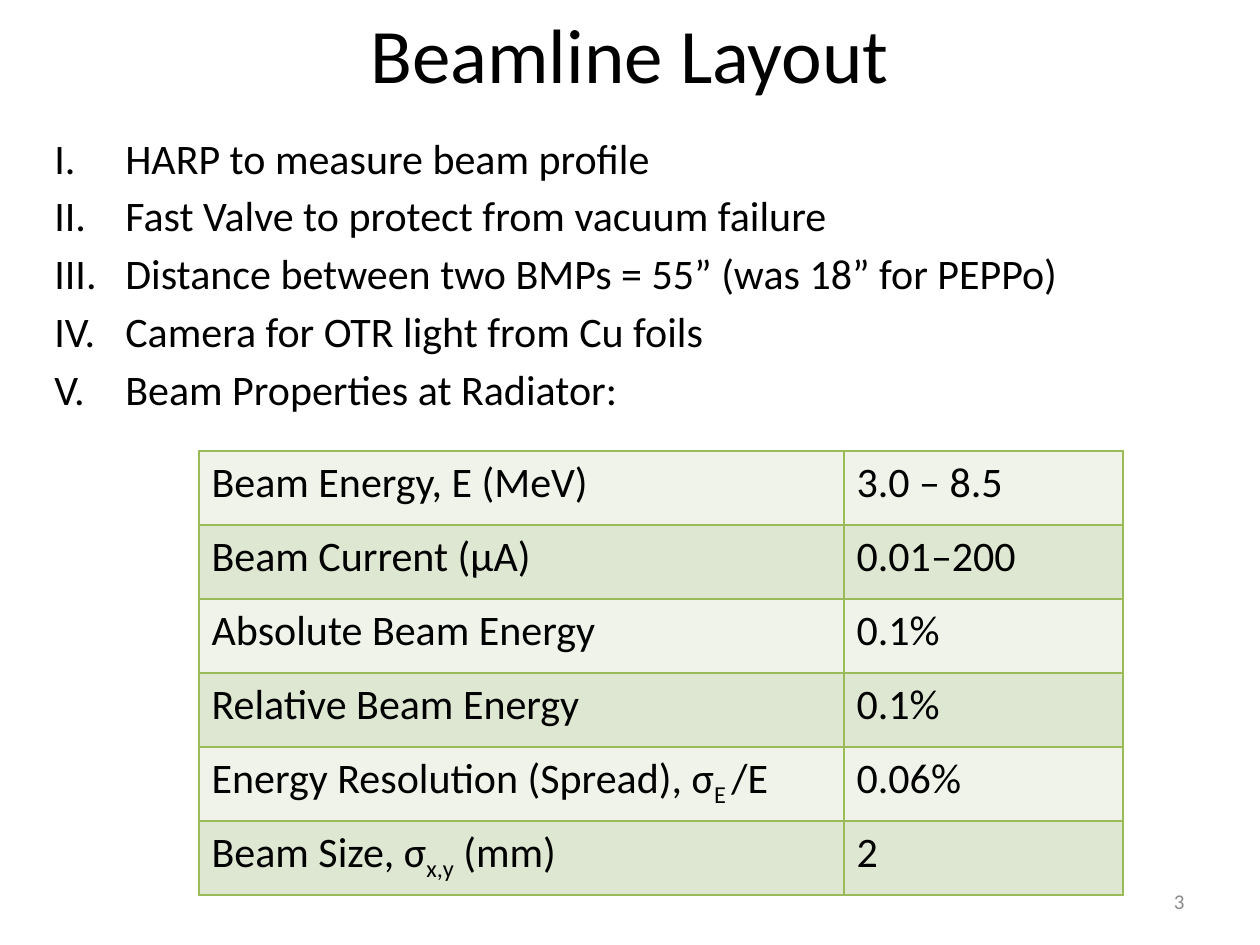
from dataclasses import dataclass

from pptx import Presentation, util as u
from pptx.dml.color import RGBColor
from pptx.enum import text
from pptx.oxml import xmlchemy
from pptx.oxml.ns import qn
from lxml import etree

PX = 914400 / 126  # EMU per px
FONT = "Calibri"
BLACK = RGBColor(0x00, 0x00, 0x00)
GRAY = RGBColor(0x8C, 0x8C, 0x8C)
GREEN = RGBColor(0x9B, 0xBB, 0x59)
BANDS = (RGBColor(0xEF, 0xF3, 0xEA), RGBColor(0xDE, 0xE7, 0xD1))

POINTS = (
    "HARP to measure beam profile",
    "Fast Valve to protect from vacuum failure",
    "Distance between two BMPs = 55” (was 18” for PEPPo)",
    "Camera for OTR light from Cu foils",
    "Beam Properties at Radiator:",
)


@dataclass(frozen=True)
class BeamProperty:
    label: str
    value: str
    subscript: str = ""
    tail: str = ""


PROPERTIES = (
    BeamProperty("Beam Energy, E (MeV)", "3.0 – 8.5"),
    BeamProperty("Beam Current (µA)", "0.01–200"),
    BeamProperty("Absolute Beam Energy", "0.1%"),
    BeamProperty("Relative Beam Energy", "0.1%"),
    BeamProperty("Energy Resolution (Spread), σ", "0.06%", "E ", "/E"),
    BeamProperty("Beam Size, σ", "2", "x,y", " (mm)"),
)
COLUMN_WIDTHS = (645, 279)
ROW_HEIGHT = 74


def px(length: int) -> u.Emu:
    return u.Emu(round(length * PX))


def box(left: int, top: int, width: int, height: int) -> tuple:
    return px(left), px(top), px(width), px(height)


def style(paragraph, size: int, color: RGBColor = BLACK) -> None:
    paragraph.font.name = FONT
    paragraph.font.size = u.Pt(size)
    paragraph.font.color.rgb = color


def add_title(slide, title: str) -> None:
    shape = slide.shapes.title
    shape.left, shape.top, shape.width, shape.height = box(63, 0, 1134, 105)
    shape.text_frame.text = title
    shape.text_frame.vertical_anchor = text.MSO_ANCHOR.MIDDLE
    paragraph = shape.text_frame.paragraphs[0]
    paragraph.alignment = text.PP_ALIGN.CENTER
    style(paragraph, 44)


def add_numbered_list(slide, points: tuple[str, ...]) -> None:
    frame = slide.shapes.add_textbox(*box(42, 126, 1197, 798)).text_frame
    frame.word_wrap = True
    frame.text = "\n".join(points)
    for index, paragraph in enumerate(frame.paragraphs):
        properties = paragraph._p.get_or_add_pPr()
        properties.set("marL", str(px(71)))
        properties.set("indent", str(px(-71)))
        etree.SubElement(properties, qn("a:buFont"), typeface="+mj-lt")
        etree.SubElement(properties, qn("a:buAutoNum"), type="romanUcPeriod")
        if index:
            paragraph.space_before = u.Pt(4.2)
        style(paragraph, 24)


def add_borders(cell) -> None:
    properties = cell._tc.get_or_add_tcPr()
    for side in ("lnL", "lnR", "lnT", "lnB"):
        line = etree.SubElement(properties, qn(f"a:{side}"), w=str(u.Pt(1)))
        fill = etree.SubElement(line, qn("a:solidFill"))
        etree.SubElement(fill, qn("a:srgbClr"), val=str(GREEN))


def add_property_table(slide, properties: tuple[BeamProperty, ...]) -> None:
    count = len(properties)
    area = box(199, 451, sum(COLUMN_WIDTHS), ROW_HEIGHT * count)
    table = slide.shapes.add_table(count, len(COLUMN_WIDTHS), *area).table
    table.first_row = False
    for column, width in zip(table.columns, COLUMN_WIDTHS):
        column.width = px(width)
    for index, (row, item) in enumerate(zip(table.rows, properties)):
        row.height = px(ROW_HEIGHT)
        label, value = row.cells
        label.text, value.text = item.label, item.value
        if item.subscript:
            paragraph = label.text_frame.paragraphs[0]
            subscript = paragraph.add_run()
            subscript.text = item.subscript
            subscript._r.get_or_add_rPr().set("baseline", "-25000")
            paragraph.add_run().text = item.tail
        for cell in (label, value):
            add_borders(cell)
            cell.fill.solid()
            cell.fill.fore_color.rgb = BANDS[index % 2]
            style(cell.text_frame.paragraphs[0], 24)


def add_page_number(slide, number: str) -> None:
    frame = slide.shapes.add_textbox(*box(903, 876, 294, 50)).text_frame
    frame.word_wrap = True
    frame.vertical_anchor = text.MSO_ANCHOR.MIDDLE
    frame.text = number
    paragraph = frame.paragraphs[0]
    paragraph.alignment = text.PP_ALIGN.RIGHT
    style(paragraph, 12, GRAY)


def main() -> None:
    presentation = Presentation()
    presentation.slide_width, presentation.slide_height = px(1260), px(945)
    title_only = presentation.slide_layouts[5]
    slide = presentation.slides.add_slide(title_only)

    # Heading and numbered points
    add_numbered_list(slide, POINTS)
    add_title(slide, "Beamline Layout")

    # Beam properties and page number
    add_property_table(slide, PROPERTIES)
    add_page_number(slide, "3")

    presentation.save("out.pptx")


if __name__ == "__main__":
    main()
